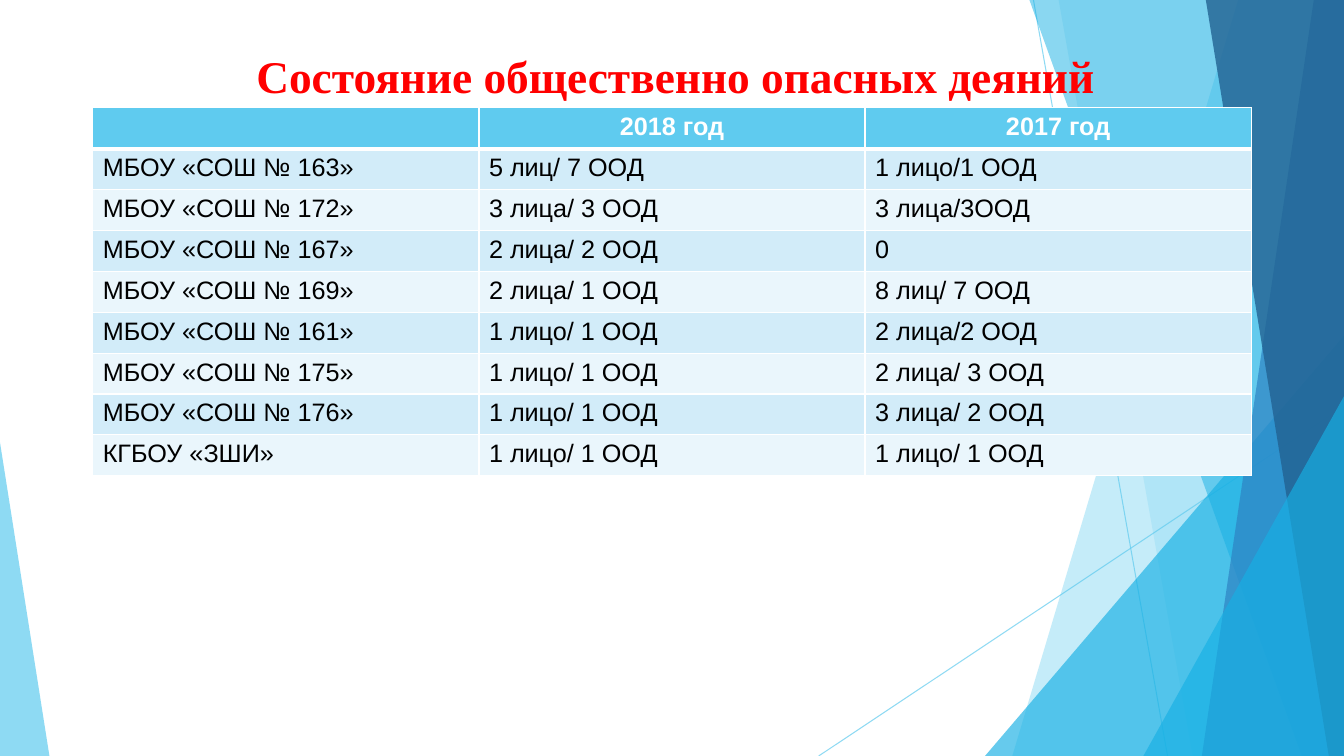
import pptx
import pptx.dml.color
import pptx.enum.shapes
import pptx.enum.text
import pptx.oxml
import pptx.oxml.ns
import pptx.util
from lxml import etree
from pptx.util import Inches

WIDTH, HEIGHT = 13.33, 7.5
COLORS = {
    "sky": "5FCBEF", "azure": "17B0E4", "blue": "2E83C3", "navy": "226292",
    "red": "FF0000", "black": "000000", "white": "FFFFFF",
    "band_dark": "D2ECF9", "band_light": "EAF6FC",
}
INCIDENTS = [
    ("", "2018 год", "2017 год"),
    ("МБОУ «СОШ № 163»", "5 лиц/ 7 ООД", "1 лицо/1 ООД"),
    ("МБОУ «СОШ № 172»", "3 лица/ 3 ООД", "3 лица/3ООД"),
    ("МБОУ «СОШ № 167»", "2 лица/ 2 ООД", "0"),
    ("МБОУ «СОШ № 169»", "2 лица/ 1 ООД", "8 лиц/ 7 ООД"),
    ("МБОУ «СОШ № 161»", "1 лицо/ 1 ООД", "2 лица/2 ООД"),
    ("МБОУ «СОШ № 175»", "1 лицо/ 1 ООД", "2 лица/ 3 ООД"),
    ("МБОУ «СОШ № 176»", "1 лицо/ 1 ООД", "3 лица/ 2 ООД"),
    ("КГБОУ «ЗШИ»", "1 лицо/ 1 ООД", "1 лицо/ 1 ООД"),
]


def rgb(color):
    return pptx.dml.color.RGBColor.from_string(COLORS[color])


def set_opacity(element, percent):
    color = next(element.iter(pptx.oxml.ns.qn("a:srgbClr")))
    alpha = etree.SubElement(color, pptx.oxml.ns.qn("a:alpha"))
    alpha.set("val", str(percent * 1000))


def paint(facet, color, opacity):
    facet.shadow.inherit = False
    facet.fill.solid()
    facet.fill.fore_color.rgb = rgb(color)
    facet.line.fill.background()
    set_opacity(facet._element.spPr, opacity)


def add_ray(slide, start, end):
    ray = slide.shapes.add_connector(
        pptx.enum.shapes.MSO_CONNECTOR.STRAIGHT,
        *(Inches(value) for value in (*start, *end)))
    ray.line.color.rgb = rgb("sky")
    ray.line.width = pptx.util.Pt(0.75)
    properties = ray._element.spPr
    set_opacity(properties, 70)
    etree.SubElement(properties, pptx.oxml.ns.qn("a:effectLst"))


def add_facet(slide, top_x, bottom_x, color, opacity):
    """Full-height panel from a slanted left side to the right slide edge."""
    corners = [(WIDTH, 0), (WIDTH, HEIGHT), (bottom_x, HEIGHT)]
    builder = slide.shapes.build_freeform(Inches(top_x), 0)
    builder.add_line_segments([(Inches(x), Inches(y)) for x, y in corners])
    paint(builder.convert_to_shape(), color, opacity)


def add_corner(slide, left, top, width, apex, color, opacity):
    """Triangle standing on the bottom slide edge."""
    corner = slide.shapes.add_shape(
        pptx.enum.shapes.MSO_SHAPE.ISOSCELES_TRIANGLE,
        Inches(left), Inches(top), Inches(width), Inches(HEIGHT - top))
    corner.adjustments[0] = apex
    paint(corner, color, opacity)


def add_backdrop(slide):
    add_ray(slide, (10.25, 0), (11.58, HEIGHT))
    add_ray(slide, (WIDTH, 4.03), (8.12, HEIGHT))
    add_facet(slide, 12.28, 10.04, "sky", 36)
    add_facet(slide, 10.5, 11.83, "sky", 20)
    add_corner(slide, 9.77, 3.33, 3.56, 1, "azure", 66)
    add_facet(slide, 10.21, 12.91, "azure", 50)
    add_facet(slide, 13.03, 11.92, "blue", 70)
    add_facet(slide, 11.96, 13.18, "navy", 80)
    add_corner(slide, 11.34, 3.93, 1.99, 1, "azure", 66)
    add_corner(slide, 0, 4.39, 0.49, 0, "sky", 70)


def format_text(paragraph, font_name, size, color, bold, centered):
    align = pptx.enum.text.PP_ALIGN
    paragraph.alignment = align.CENTER if centered else align.LEFT
    for run in paragraph.runs:
        run.font.name = font_name
        run.font.size = pptx.util.Pt(size)
        run.font.color.rgb = rgb(color)
        run.font.bold = bold


def add_title(slide, text):
    title = slide.shapes.title
    title.left, title.top = Inches(0.98), Inches(0.4)
    title.width, title.height = Inches(11.44), Inches(0.55)
    frame = title.text_frame
    frame.text = text
    frame.word_wrap = True
    frame.auto_size = pptx.enum.text.MSO_AUTO_SIZE.NONE
    frame.vertical_anchor = pptx.enum.text.MSO_ANCHOR.TOP
    frame.margin_top = Inches(0.08)
    format_text(frame.paragraphs[0], "Times New Roman", 32.4, "red", True, True)
    # Bring the title in front of the backdrop
    slide.shapes._spTree.append(title._element)


def set_borders(cell, widths):
    properties = cell._tc.get_or_add_tcPr()
    for position, (side, width) in enumerate(widths.items()):
        border = pptx.oxml.parse_xml(
            f'<a:ln{side} {pptx.oxml.ns.nsdecls("a")} w="{pptx.util.Pt(width)}">'
            f'<a:solidFill><a:srgbClr val="{COLORS["white"]}"/></a:solidFill>'
            f'</a:ln{side}>')
        properties.insert(position, border)


def add_incident_table(slide):
    table = slide.shapes.add_table(
        len(INCIDENTS), len(INCIDENTS[0]),
        Inches(0.92), Inches(1.07), Inches(11.49), Inches(3.65)).table
    for row, values in enumerate(INCIDENTS):
        header = row == 0
        band = "sky" if header else "band_dark" if row % 2 else "band_light"
        for column, value in enumerate(values):
            cell = table.cell(row, column)
            cell.text = value
            format_text(cell.text_frame.paragraphs[0], "Arial", 18,
                        "white" if header else "black", header, header)
            cell.fill.solid()
            cell.fill.fore_color.rgb = rgb(band)
            set_borders(cell, {"L": 1, "R": 1, "T": 3 if row == 1 else 1,
                               "B": 3 if header else 1})


def main():
    deck = pptx.Presentation()
    deck.slide_width, deck.slide_height = Inches(WIDTH), Inches(HEIGHT)
    slide = deck.slides.add_slide(deck.slide_layouts.get_by_name("Title Only"))
    add_backdrop(slide)
    add_title(slide, "Состояние общественно опасных деяний")
    add_incident_table(slide)
    deck.save("out.pptx")


if __name__ == "__main__":
    main()
